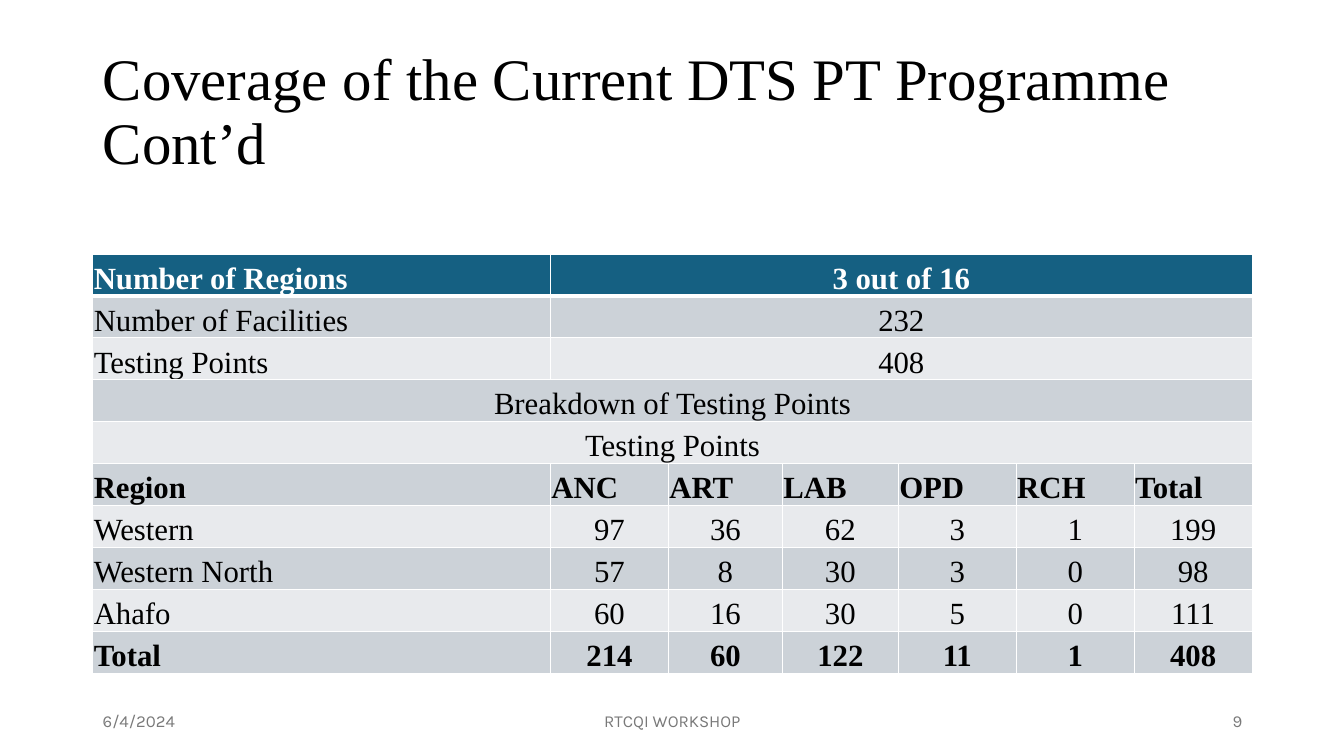
"""Build the slide on the coverage of the current DTS PT programme."""
from dataclasses import dataclass

from lxml.etree import SubElement
from pptx import Presentation
from pptx.dml.color import RGBColor as RGB
from pptx.enum.text import MSO_ANCHOR as Anchor, PP_ALIGN as Align
from pptx.oxml.ns import qn
from pptx.util import Inches, Pt


@dataclass(frozen=True)
class Theme:
    serif: str = "Times New Roman"
    sans: str = "Karla"
    black: str = "000000"
    white: str = "FFFFFF"
    header: str = "156082"
    band_dark: str = "CCD2D8"
    band_light: str = "E8EAED"
    grey: str = "797979"
    title_size: int = 42
    table_size: int = 22
    footer_size: int = 12


THEME = Theme()


def write(frame, text, font, size, color, align=Align.LEFT, bold=False):
    """Put one styled run in the first paragraph and return the paragraph."""
    paragraph = frame.paragraphs[0]
    paragraph.alignment = align
    run = paragraph.add_run()
    run.text = text
    run.font.name = font
    run.font.size = Pt(size)
    run.font.bold = bold
    run.font.color.rgb = RGB.from_string(color)
    return paragraph


def add_border(cell, side, points):
    """Draw one white edge of a table cell."""
    line = SubElement(cell._tc.get_or_add_tcPr(), qn(f"a:ln{side}"), w=str(Pt(points)))
    fill = SubElement(line, qn("a:solidFill"))
    SubElement(fill, qn("a:srgbClr"), val=THEME.white)


prs = Presentation()
prs.slide_width, prs.slide_height = Inches(13.33), Inches(7.5)
slide = prs.slides.add_slide(prs.slide_layouts[5])

title = slide.shapes.title
title.left, title.top = Inches(0.92), Inches(0.4)
title.width, title.height = Inches(11.5), Inches(1.45)
title.text_frame.vertical_anchor = Anchor.MIDDLE
heading = write(title.text_frame, "Coverage of the Current DTS PT Programme Cont’d",
                THEME.serif, THEME.title_size, THEME.black)
heading.line_spacing = 0.9

COVERAGE = [
    ["Number of Regions", "3 out of 16"],
    ["Number of Facilities", "232"],
    ["Testing Points", "408"],
    ["Breakdown of Testing Points"],
    ["Testing Points"],
    ["Region", "ANC", "ART", "LAB", "OPD", "RCH", "Total"],
    ["Western", "97", "36", "62", "3", "1", "199"],
    ["Western North", "57", "8", "30", "3", "0", "98"],
    ["Ahafo", "60", "16", "30", "5", "0", "111"],
    ["Total", "214", "60", "122", "11", "1", "408"],
]
COLUMN_WIDTHS = [4.54, 1.17, 1.13, 1.15, 1.17, 1.17, 1.17]
ROW_HEIGHT = 0.416
REGION_ROW = 5
BOLD_ROWS = {0, REGION_ROW, len(COVERAGE) - 1}
last_column = len(COLUMN_WIDTHS) - 1

coverage = slide.shapes.add_table(
    len(COVERAGE), len(COLUMN_WIDTHS), Inches(0.92), Inches(2.52),
    Inches(sum(COLUMN_WIDTHS)), Inches(ROW_HEIGHT * len(COVERAGE))).table
for column, width in zip(coverage.columns, COLUMN_WIDTHS):
    column.width = Inches(width)

for r, values in enumerate(COVERAGE):
    coverage.rows[r].height = Inches(ROW_HEIGHT)
    band = THEME.header if r == 0 else THEME.band_dark if r % 2 else THEME.band_light
    for c in range(len(COLUMN_WIDTHS)):
        cell = coverage.cell(r, c)
        cell.margin_left = cell.margin_right = cell.margin_top = Inches(0.01)
        cell.margin_bottom = 0
        cell.vertical_anchor = Anchor.BOTTOM
        for side in "LRTB":
            add_border(cell, side, 3 if (r, side) in {(0, "B"), (1, "T")} else 1)
        cell.fill.solid()
        cell.fill.fore_color.rgb = RGB.from_string(band)
    if len(values) <= last_column:
        coverage.cell(r, len(values) - 1).merge(coverage.cell(r, last_column))
    for c, value in enumerate(values):
        is_label = r == REGION_ROW or (c == 0 and len(values) > 1)
        write(coverage.cell(r, c).text_frame, value, THEME.serif, THEME.table_size,
              THEME.white if r == 0 else THEME.black,
              Align.LEFT if is_label else Align.CENTER, r in BOLD_ROWS)

FOOTER = [
    ("6/4/2024", 0.92, 3, Align.LEFT),
    ("RTCQI WORKSHOP", 4.42, 4.5, Align.CENTER),
    ("9", 9.42, 3, Align.RIGHT),
]
for text, left, width, align in FOOTER:
    footer = slide.shapes.add_textbox(Inches(left), Inches(6.95), Inches(width), Inches(0.4))
    footer.text_frame.word_wrap = True
    footer.text_frame.vertical_anchor = Anchor.MIDDLE
    line = write(footer.text_frame, text, THEME.sans, THEME.footer_size, THEME.grey, align)
    line.space_after = Pt(6)

prs.save("out.pptx")
